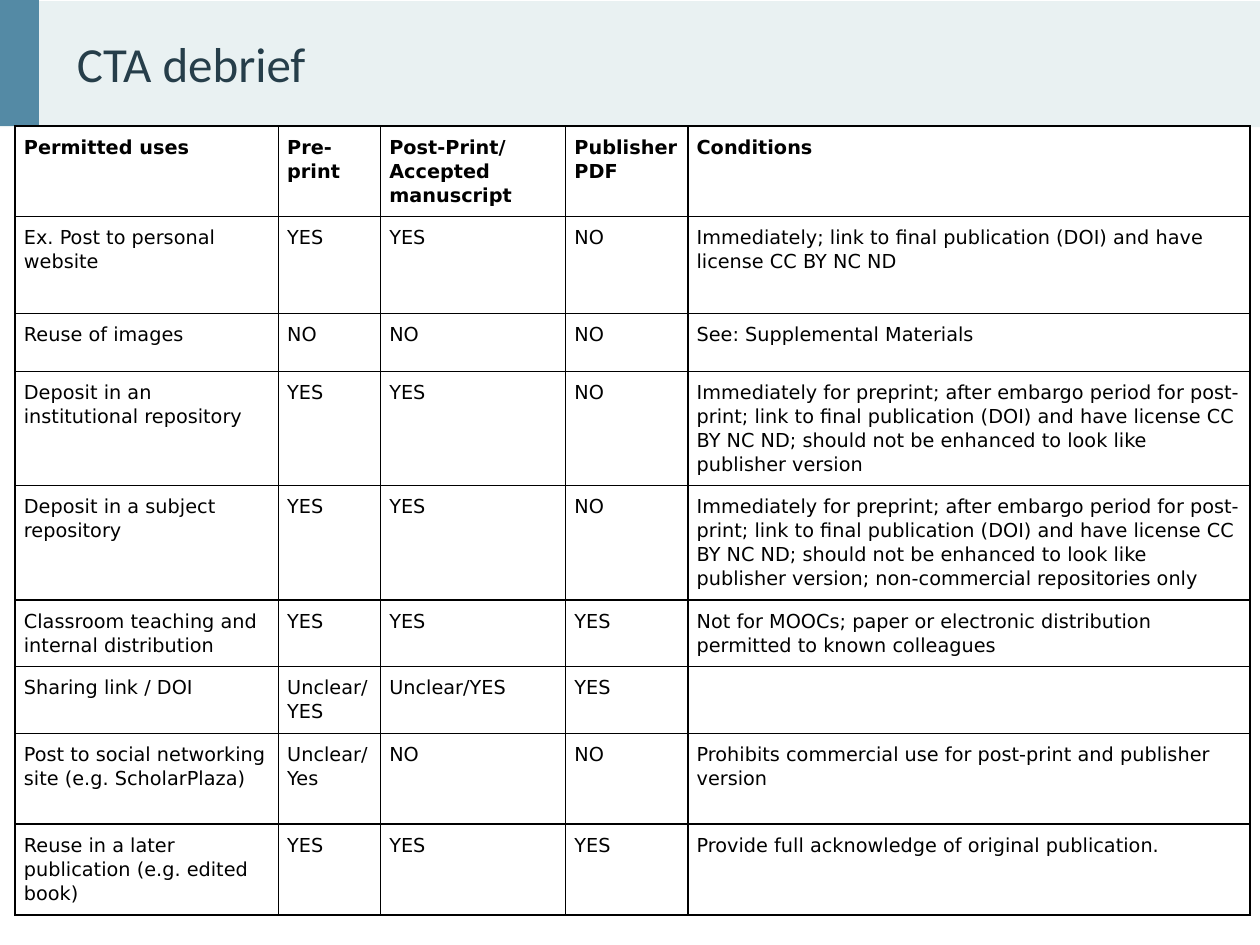
import pptx
import pptx.dml.color
import pptx.enum.shapes
import pptx.enum.text
import pptx.oxml
import pptx.oxml.ns
import pptx.util

THEME = {
    "band": "E9F1F2", "accent": "548AA5", "title": "263E4A",
    "ink": "000000", "paper": "FFFFFF",
    "title_font": "Calibri", "title_size": 28,
    "table_font": "DejaVu Sans", "table_size": 11, "line_spacing": 1.07,
    "border": 1, "table_style": "{2D5ABB26-0587-4C30-8999-92F81FD0307C}",
}
Inches = pptx.util.Inches


def color(name):
    return pptx.dml.color.RGBColor.from_string(THEME[name])


def style_font(font, kind, ink, bold=False):
    font.name = THEME[kind + "_font"]
    font.size = pptx.util.Pt(THEME[kind + "_size"])
    font.color.rgb = color(ink)
    font.bold = bold


deck = pptx.Presentation()
deck.slide_width, deck.slide_height = Inches(10), Inches(7.5)
page = deck.slides.add_slide(deck.slide_layouts[5])
header_height = Inches(1)
accent_width = Inches(0.31)

# Header band and accent block, placed behind the title
title = page.shapes.title
for top, width, fill in ((Inches(0.01), deck.slide_width, "band"),
                         (0, accent_width, "accent")):
    block = page.shapes.add_shape(pptx.enum.shapes.MSO_SHAPE.RECTANGLE,
                                  0, top, width, header_height)
    block.shadow.inherit = False
    block.fill.solid()
    block.fill.fore_color.rgb = color(fill)
    block.line.fill.background()
    title._element.addprevious(block._element)

# Title
title.left, title.top = accent_width, 0
title.width, title.height = deck.slide_width - accent_width, header_height
frame = title.text_frame
frame.text = "CTA debrief"
frame.word_wrap = True
frame.auto_size = pptx.enum.text.MSO_AUTO_SIZE.NONE
frame.vertical_anchor = pptx.enum.text.MSO_ANCHOR.MIDDLE
frame.margin_left = frame.margin_right = Inches(0.3)
frame.margin_top = frame.margin_bottom = Inches(0.05)
para = frame.paragraphs[0]
para.alignment = pptx.enum.text.PP_ALIGN.LEFT
style_font(para.font, "title", "title")

# Table content
DEPOSIT = ("Immediately for preprint; after embargo period for post-print; "
           "link to final publication (DOI) and have license CC BY NC ND; "
           "should not be enhanced to look like publisher version")
ROWS = [
    ("Permitted uses", "Pre-print", "Post-Print/Accepted manuscript",
     "Publisher PDF", "Conditions"),
    ("Ex. Post to personal website", "YES", "YES", "NO",
     "Immediately; link to final publication (DOI) and have license CC BY NC ND"),
    ("Reuse of images", "NO", "NO", "NO", "See: Supplemental Materials"),
    ("Deposit in an institutional repository", "YES", "YES", "NO", DEPOSIT),
    ("Deposit in a subject repository", "YES", "YES", "NO",
     DEPOSIT + "; non-commercial repositories only"),
    ("Classroom teaching and internal distribution", "YES", "YES", "YES",
     "Not for MOOCs; paper or electronic distribution permitted to known colleagues"),
    ("Sharing link / DOI", "Unclear/YES", "Unclear/YES", "YES", ""),
    ("Post to social networking site (e.g. ScholarPlaza)", "Unclear/Yes", "NO", "NO",
     "Prohibits commercial use for post-print and publisher version"),
    ("Reuse in a later publication (e.g. edited book)", "YES", "YES", "YES",
     "Provide full acknowledge of original publication."),
]
COLUMN_WIDTHS = [2.09, 0.81, 1.47, 0.97, 4.46]
ROW_HEIGHTS = [0.72, 0.77, 0.46, 0.9, 0.91, 0.53, 0.53, 0.72, 0.72]

# Table grid
holder = page.shapes.add_table(len(ROWS), len(COLUMN_WIDTHS), Inches(0.12), header_height,
                               Inches(sum(COLUMN_WIDTHS)), Inches(sum(ROW_HEIGHTS)))
table = holder.table
table.horz_banding = False
table._tbl.tblPr.find(pptx.oxml.ns.qn("a:tableStyleId")).text = THEME["table_style"]
for column, width in zip(table.columns, COLUMN_WIDTHS):
    column.width = Inches(width)
for row, height in zip(table.rows, ROW_HEIGHTS):
    row.height = Inches(height)

# Cells: text, borders, fill
for r, texts in enumerate(ROWS):
    for c, text in enumerate(texts):
        cell = table.cell(r, c)
        cell.text = text
        cell.margin_left = cell.margin_right = Inches(0.07)
        cell.margin_top = cell.margin_bottom = Inches(0.07)
        para = cell.text_frame.paragraphs[0]
        para.line_spacing = THEME["line_spacing"]
        style_font(para.font, "table", "ink", bold=r == 0)
        properties = cell._tc.get_or_add_tcPr()
        for side in ("lnL", "lnR", "lnT", "lnB"):
            properties.append(pptx.oxml.parse_xml(
                f'<a:{side} {pptx.oxml.ns.nsdecls("a")} w="{pptx.util.Pt(THEME["border"])}">'
                f'<a:solidFill><a:srgbClr val="{THEME["ink"]}"/></a:solidFill></a:{side}>'))
        if r == 0:
            cell.fill.background()
        else:
            cell.fill.solid()
            cell.fill.fore_color.rgb = color("paper")

deck.save("out.pptx")
